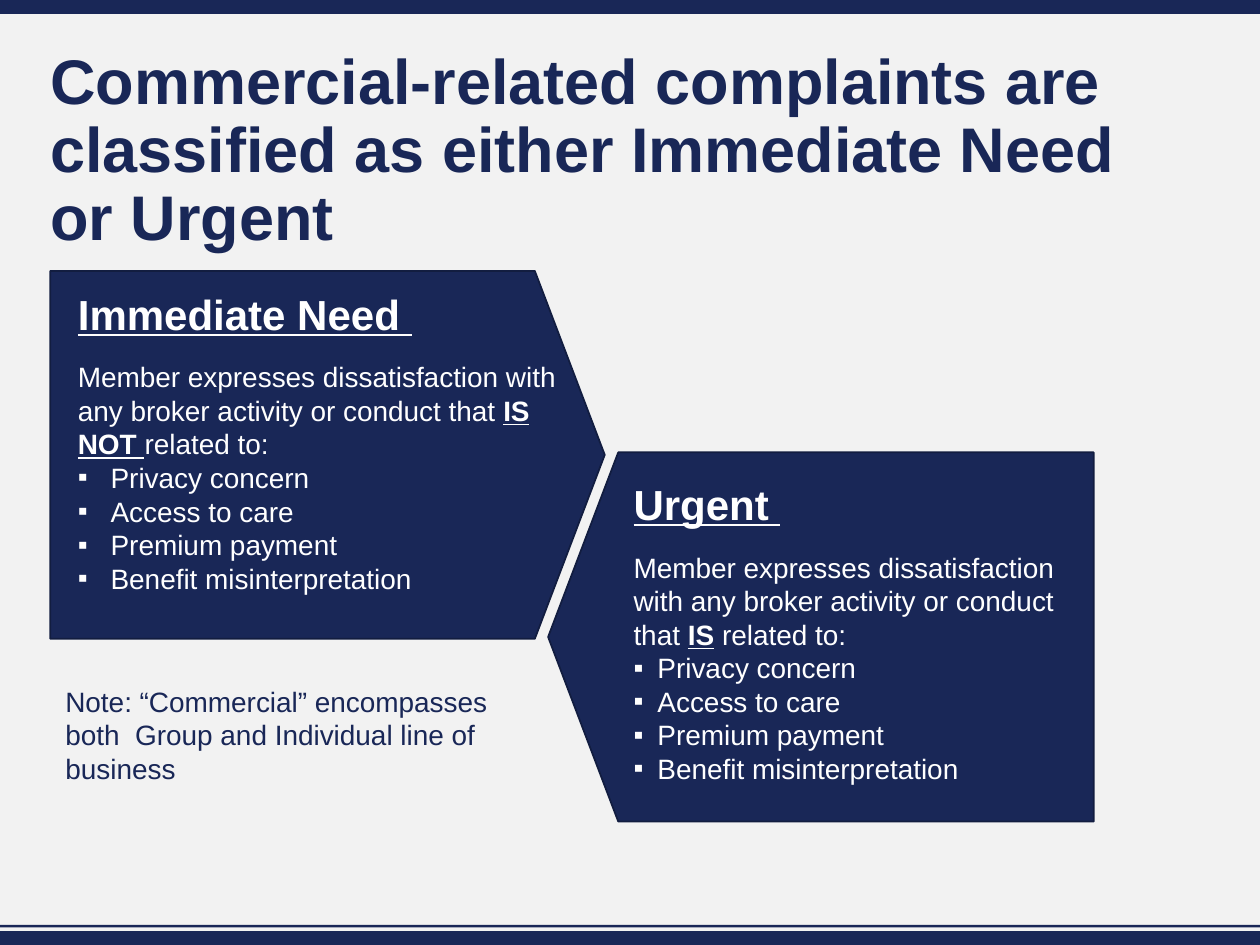
from pptx import Presentation
from pptx.dml.color import RGBColor
from pptx.enum.shapes import MSO_SHAPE
from pptx.oxml.ns import qn
from pptx.util import Inches, Pt
from lxml import etree

RECTANGLE = MSO_SHAPE.RECTANGLE
PENTAGON = MSO_SHAPE.PENTAGON
NAVY = "192757"
NAVY_EDGE = "121D40"
WHITE = "FFFFFF"
BACKGROUND = "F2F2F2"
FONT = "Arial"
TOPICS = ["Privacy concern", "Access to care", "Premium payment", "Benefit misinterpretation"]
INTRO = "Member expresses dissatisfaction with any broker activity or conduct that "


def paint(fill, color):
    """Make a fill solid in a hex colour."""
    fill.solid()
    fill.fore_color.rgb = RGBColor.from_string(color)


def add_block(slide, preset, box, edge=None):
    """Add a navy shape, outlined when an edge colour is given."""
    block = slide.shapes.add_shape(preset, *map(Inches, box))
    block.shadow.inherit = False
    paint(block.fill, NAVY)
    if edge:
        paint(block.line.fill, edge)
        block.line.width = Pt(1)
    else:
        block.line.fill.background()
    return block


def add_pentagon(slide, box, rotation=0):
    """Add an arrow-shaped panel."""
    panel = add_block(slide, PENTAGON, box, NAVY_EDGE)
    panel.adjustments[0] = 0.19
    panel.rotation = rotation


def add_frame(slide, box, inset=True):
    """Add a wrapping text box and return its text frame."""
    frame = slide.shapes.add_textbox(*map(Inches, box)).text_frame
    frame.word_wrap = True
    if not inset:
        frame.margin_left = frame.margin_right = 0
        frame.margin_top = frame.margin_bottom = 0
    return frame


def add_bullet(paragraph, indent):
    """Give a paragraph a square bullet with a hanging indent."""
    properties = paragraph._p.get_or_add_pPr()
    properties.set("marL", str(Inches(indent)))
    properties.set("indent", str(-Inches(indent)))
    etree.SubElement(properties, qn("a:buFont")).set("typeface", FONT)
    etree.SubElement(properties, qn("a:buChar")).set("char", "▪")


def write(frame, text, size=16, color=NAVY, bold=False, emphasis="", ending="",
          underline=False, after=0, spacing=None, indent=0):
    """Write one paragraph, with an optional emphasised phrase before its ending."""
    first = frame.paragraphs[0]
    paragraph = frame.add_paragraph() if first.runs else first
    if indent:
        add_bullet(paragraph, indent)
    paragraph.space_after = Pt(after)
    if spacing:
        paragraph.line_spacing = spacing
    for index, part in enumerate(text.split("\n")):
        if index:
            paragraph.add_line_break()
        paragraph.add_run().text = part
    marked = [(run, bold, underline) for run in paragraph.runs]
    for part, strong in ((emphasis, True), (ending, False)):
        if part:
            run = paragraph.add_run()
            run.text = part
            marked.append((run, strong, strong))
    for run, strong, lined in marked:
        run.font.name = FONT
        run.font.size = Pt(size)
        run.font.color.rgb = RGBColor.from_string(color)
        run.font.bold = strong
        run.font.underline = lined


def add_category(slide, box, heading, emphasis, ending, indent):
    """Add the heading, definition and topics of a complaint category."""
    frame = add_frame(slide, box)
    write(frame, heading, size=24, color=WHITE, bold=True, underline=True, after=12)
    write(frame, INTRO, color=WHITE, emphasis=emphasis, ending=ending)
    for topic in TOPICS:
        write(frame, topic, color=WHITE, indent=indent)


def main():
    """Build the complaint classification slide."""
    deck = Presentation()
    deck.slide_width, deck.slide_height = Inches(10), Inches(7.5)
    slide = deck.slides.add_slide(deck.slide_layouts[6])
    paint(slide.background.fill, BACKGROUND)

    for top, height in ((0, 0.11), (7.39, 0.11), (7.34, 0.02)):
        add_block(slide, RECTANGLE, (0, top, 10, height))
    add_pentagon(slide, (0.4, 2.15, 4.4, 2.92))
    add_pentagon(slide, (4.35, 3.59, 4.33, 2.93), rotation=180)

    add_category(slide, (0.52, 2.24, 4.24, 2.56), "Immediate Need ",
                 "IS NOT ", "related to:", 0.26)
    add_category(slide, (4.93, 3.75, 3.83, 2.86), "Urgent ",
                 "IS", " related to:", 0.19)

    title = add_frame(slide, (0.4, 0.4, 9.2, 0.62), inset=False)
    write(title, "Commercial-related complaints are classified as either Immediate Need \nor Urgent",
          size=36, bold=True, spacing=0.9)
    note = add_frame(slide, (0.42, 5.38, 3.89, 0.91))
    write(note, "Note: “Commercial” encompasses both  Group and Individual line of business")

    deck.save("out.pptx")


if __name__ == "__main__":
    main()
